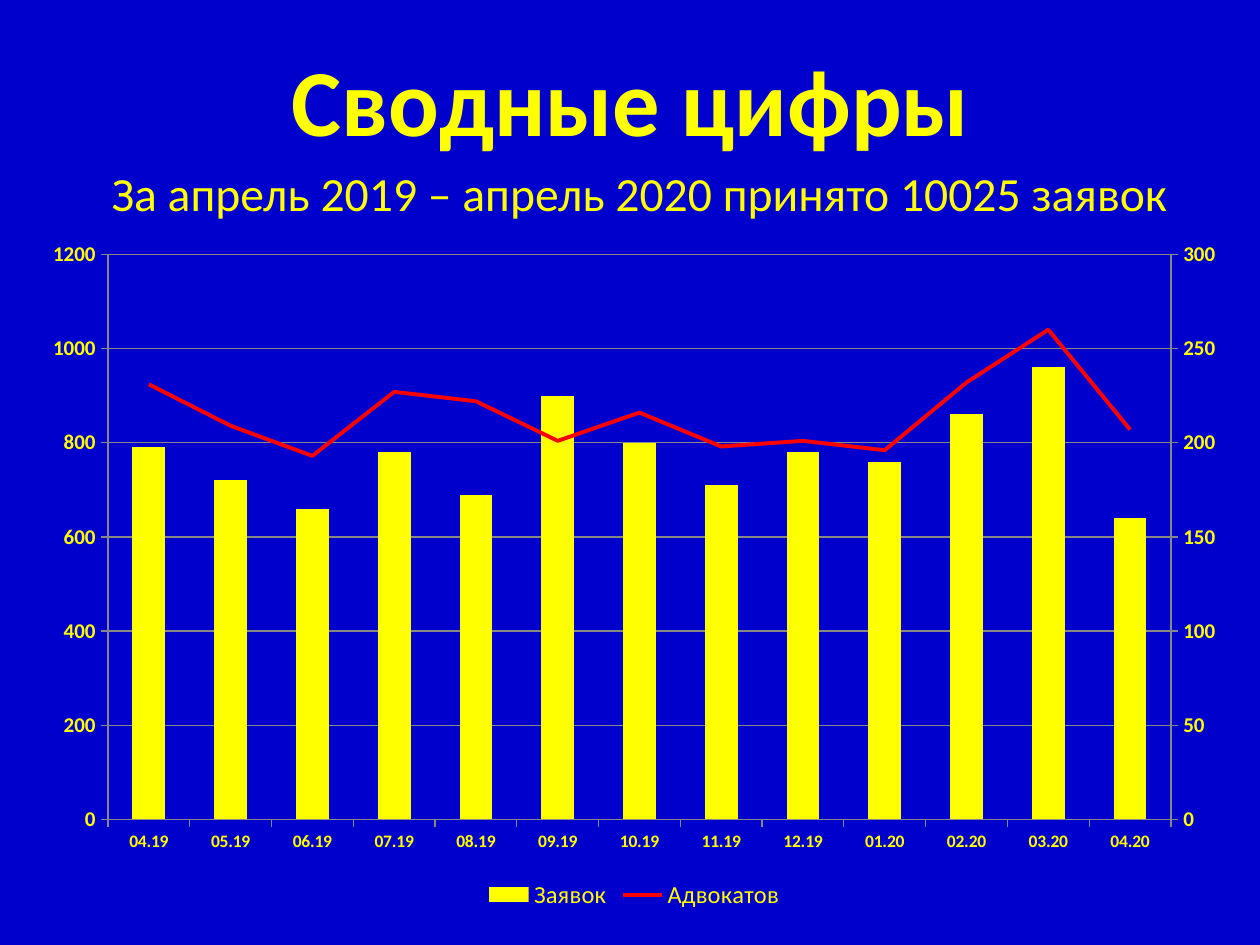
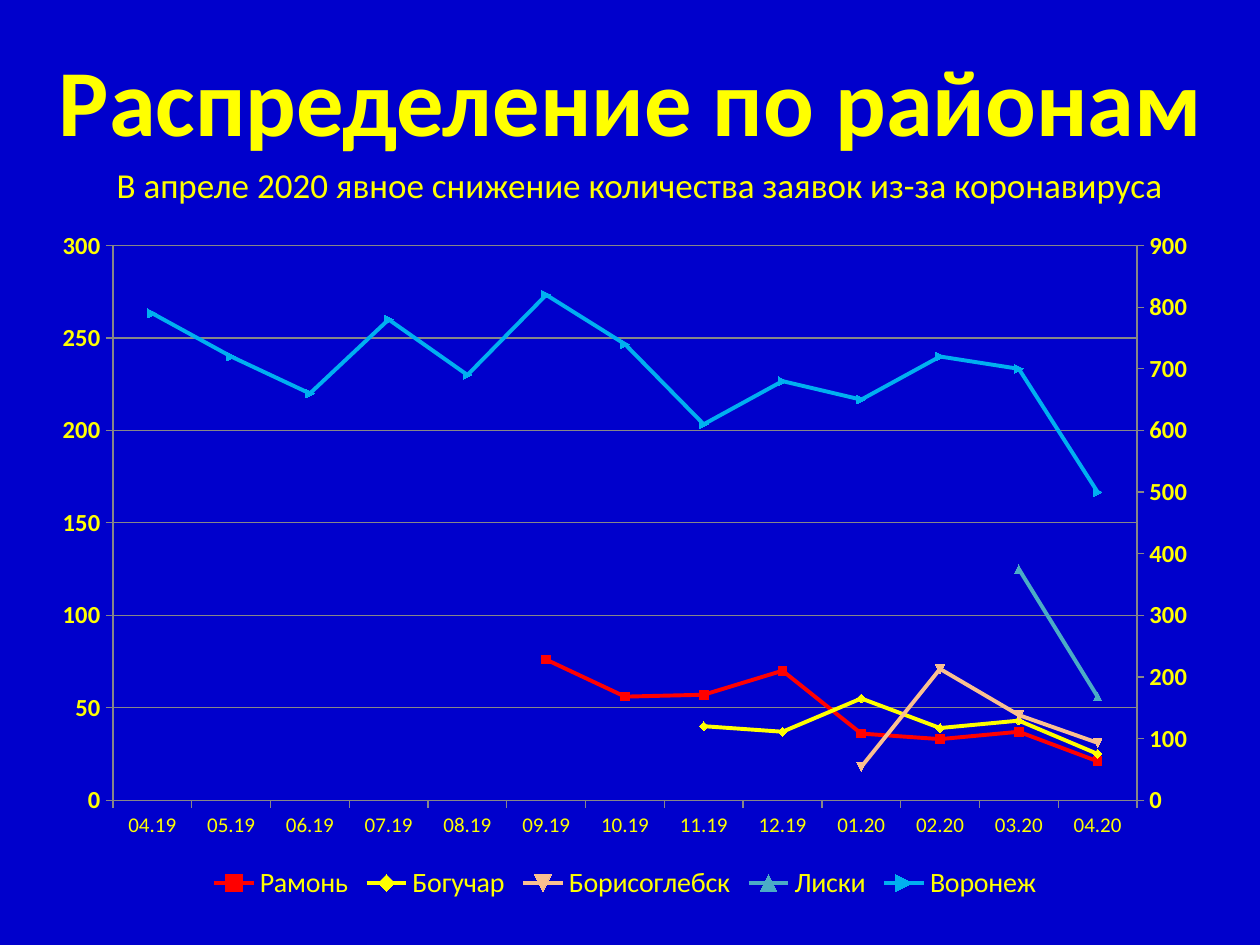
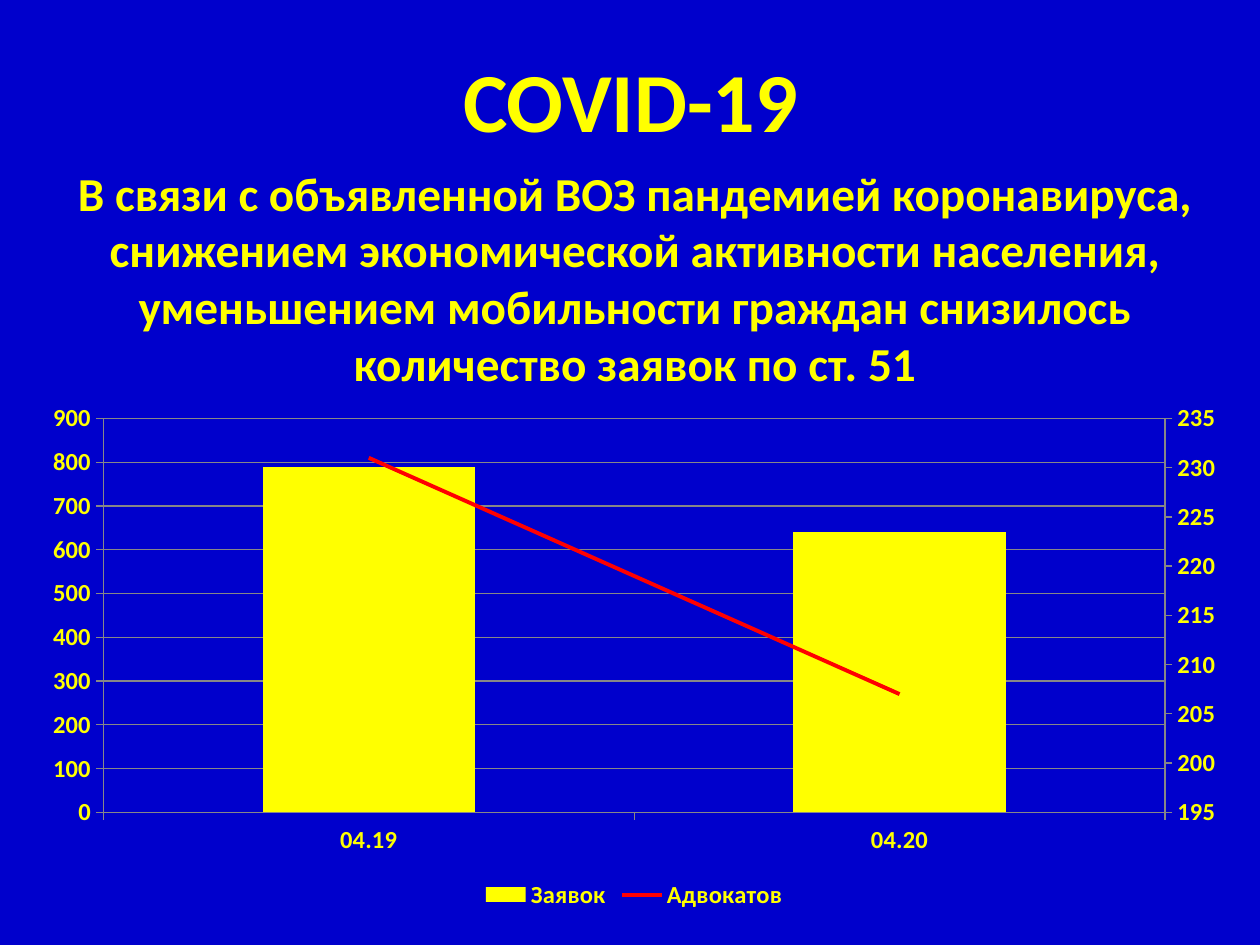
from copy import deepcopy
from dataclasses import dataclass

from pptx import Presentation
from pptx.chart.axis import ValueAxis
from pptx.chart.data import CategoryChartData
from pptx.dml.color import RGBColor
from pptx.enum.chart import XL_CHART_TYPE, XL_LEGEND_POSITION, XL_MARKER_STYLE, XL_TICK_MARK
from pptx.enum.text import MSO_ANCHOR, PP_ALIGN
from pptx.oxml import parse_xml
from pptx.oxml.ns import nsdecls, qn
from pptx.util import Cm, Pt

BARS = XL_CHART_TYPE.COLUMN_CLUSTERED
LINES = XL_CHART_TYPE.LINE_MARKERS
BOTTOM = XL_LEGEND_POSITION.BOTTOM
AUTO, PLAIN = XL_MARKER_STYLE.AUTOMATIC, XL_MARKER_STYLE.NONE
OUT = XL_TICK_MARK.OUTSIDE
TOP, MIDDLE = MSO_ANCHOR.TOP, MSO_ANCHOR.MIDDLE
CENTER = PP_ALIGN.CENTER

MONTHS = ["04.19", "05.19", "06.19", "07.19", "08.19", "09.19", "10.19",
          "11.19", "12.19", "01.20", "02.20", "03.20", "04.20"]


@dataclass(frozen=True)
class Theme:
    font: str = "Calibri"
    back: str = "0000CC"
    text: str = "FFFF00"
    grid: str = "878787"
    red: str = "FF0000"
    peach: str = "FAC090"
    teal: str = "4BACC6"
    sky: str = "00B0F0"
    head: float = 54
    short: float = 48
    lead: float = 27.2
    note: float = 20
    body: float = 27
    tiny: float = 10
    small: float = 12
    mid: float = 14
    large: float = 16
    line: float = 2.25
    hair: float = 0.75
    mark: int = 5


def rgb(code):
    return RGBColor.from_string(code)


def style(font, theme, size, bold=False):
    font.name = theme.font
    font.size = Pt(size)
    font.bold = bold
    font.color.rgb = rgb(theme.text)


def write(frame, text, *, theme, size, bold=False, anchor=TOP):
    frame.word_wrap = True
    frame.vertical_anchor = anchor
    para = frame.paragraphs[0]
    para.alignment = CENTER
    run = para.add_run()
    run.text = text
    style(run.font, theme, size, bold)


def scale(axis, low, high, step):
    axis.minimum_scale = low
    axis.maximum_scale = high
    axis.major_unit = step


def rekey(axis, own, cross):
    axis.find(qn("c:axId")).set("val", own)
    axis.find(qn("c:crossAx")).set("val", cross)


def split(chart, group, span):
    area = chart.plots[0]._element.getparent()
    first = chart.plots[0]._element
    last = first.findall(qn("c:ser"))[-1]
    flip = last.find(qn("c:invertIfNegative"))
    if flip is not None:
        last.remove(flip)
    line = parse_xml(
        f'<c:lineChart {nsdecls("c")}><c:grouping val="{group}"/>'
        '<c:varyColors val="0"/><c:marker val="1"/>'
        '<c:axId val="5001"/><c:axId val="5002"/></c:lineChart>')
    line.insert(2, last)
    first.addnext(line)
    value = chart.value_axis._element
    right = deepcopy(value)
    base = deepcopy(chart.category_axis._element)
    rekey(base, "5001", "5002")
    rekey(right, "5002", "5001")
    base.find(qn("c:delete")).set("val", "1")
    right.find(qn("c:axPos")).set("val", "r")
    right.find(qn("c:crosses")).set("val", "max")
    area.findall(qn("c:valAx"))[-1].addnext(right)
    right.addnext(base)
    axis = ValueAxis(right)
    axis.has_major_gridlines = False
    scale(axis, *span)


class Deck:
    def __init__(self, theme):
        self.theme = theme
        self.file = Presentation()
        self.file.slide_width = Cm(25.4)
        self.file.slide_height = Cm(19.05)
        self.slide = None

    def start(self):
        self.slide = self.file.slides.add_slide(self.file.slide_layouts[6])
        fill = self.slide.background.fill
        fill.solid()
        fill.fore_color.rgb = rgb(self.theme.back)

    def text(self, words, box, **form):
        shape = self.slide.shapes.add_textbox(*map(Cm, box))
        write(shape.text_frame, words, theme=self.theme, **form)

    def title(self, words, size):
        self.text(words, (0.41, 0.79, 24.61, 2.39), size=size, bold=True, anchor=MIDDLE)

    def lead(self, words, size, wide=23.42, high=1.78, bold=False):
        self.text(words, (1.19, 3.18, wide, high), size=size, bold=bold)

    def axis(self, axis, size, bold):
        axis.major_tick_mark = OUT
        axis.format.line.color.rgb = rgb(self.theme.grid)
        axis.format.line.width = Pt(self.theme.hair)
        style(axis.tick_labels.font, self.theme, size, bold)

    def paint(self, series, hue, mark):
        theme = self.theme
        if not hasattr(series, "smooth"):
            series.format.fill.solid()
            series.format.fill.fore_color.rgb = rgb(hue)
            return
        series.smooth = False
        series.format.line.color.rgb = rgb(hue)
        series.format.line.width = Pt(theme.line)
        series.marker.style = mark
        if mark == AUTO:
            series.marker.size = theme.mark
            for part in (series.marker.format.fill, series.marker.format.line.fill):
                part.solid()
                part.fore_color.rgb = rgb(hue)

    def chart(self, kind, box, cats, rows, left, right, base, value, key):
        data = CategoryChartData()
        data.categories = cats
        for name, vals, _ in rows:
            data.add_series(name, [None] * (len(cats) - len(vals)) + vals)
        chart = self.slide.shapes.add_chart(kind, *map(Cm, box), data).chart
        chart.has_title = False
        style(chart.font, self.theme, self.theme.tiny)
        chart.has_legend = True
        chart.legend.position = BOTTOM
        chart.legend.include_in_layout = False
        style(chart.legend.font, self.theme, *key)
        self.axis(chart.category_axis, *base)
        self.axis(chart.value_axis, *value)
        chart.value_axis.tick_labels.number_format = "0"
        chart.value_axis.tick_labels.number_format_is_linked = False
        chart.value_axis.has_major_gridlines = True
        grid = chart.value_axis.major_gridlines.format.line
        grid.color.rgb = rgb(self.theme.grid)
        grid.width = Pt(self.theme.hair)
        scale(chart.value_axis, *left)
        bars = kind == BARS
        if bars:
            chart.plots[0].gap_width = 150
        split(chart, "stacked" if bars else "standard", right)
        for plot in chart.plots:
            plot.vary_by_categories = False
        for series, row in zip(chart.series, rows):
            self.paint(series, row[2], PLAIN if bars else AUTO)


def main():
    look = Theme()
    deck = Deck(look)
    calls = [790, 720, 660, 780, 690, 900, 800, 710, 780, 760, 860, 960, 640]
    staff = [231, 209, 193, 227, 222, 201, 216, 198, 201, 196, 232, 260, 207]

    deck.start()
    deck.title("Сводные цифры", look.head)
    deck.lead("За апрель 2019 – апрель 2020 принято 10025 заявок", look.lead)
    deck.chart(
        BARS, (0.58, 4.6, 24.41, 13.84), MONTHS,
        [("Заявок", calls, look.text), ("Адвокатов", staff, look.red)],
        left=(0, 1200, 200), right=(0, 300, 50),
        base=(look.tiny, True), value=(look.small, True), key=(look.mid, False))

    deck.start()
    deck.title("Распределение по районам", look.head)
    deck.lead("В апреле 2020 явное снижение количества заявок из-за коронавируса", look.note)
    deck.chart(
        LINES, (0.79, 4.37, 23.62, 13.89), MONTHS,
        [("Рамонь", [76, 56, 57, 70, 36, 33, 37, 21], look.red),
         ("Богучар", [40, 37, 55, 39, 43, 25], look.text),
         ("Борисоглебск", [18, 71, 46, 31], look.peach),
         ("Лиски", [125, 56], look.teal),
         ("Воронеж", [790, 720, 660, 780, 690, 820, 740, 610, 680, 650, 720, 700, 500],
          look.sky)],
        left=(0, 300, 50), right=(0, 900, 100),
        base=(look.small, False), value=(look.mid, True), key=(look.large, False))

    deck.start()
    deck.title("COVID-19", look.short)
    deck.lead(
        "В связи с объявленной ВОЗ пандемией коронавируса, снижением экономической "
        "активности населения, уменьшением мобильности граждан снизилось количество "
        "заявок по ст. 51", look.body, wide=23.22, high=4.78, bold=True)
    bold = (look.mid, True)
    deck.chart(
        BARS, (0.58, 7.92, 24.41, 10.52), [MONTHS[0], MONTHS[-1]],
        [("Заявок", [calls[0], calls[-1]], look.text),
         ("Адвокатов", [staff[0], staff[-1]], look.red)],
        left=(0, 900, 100), right=(195, 235, 5), base=bold, value=bold, key=bold)

    deck.file.save("out.pptx")


if __name__ == "__main__":
    main()
